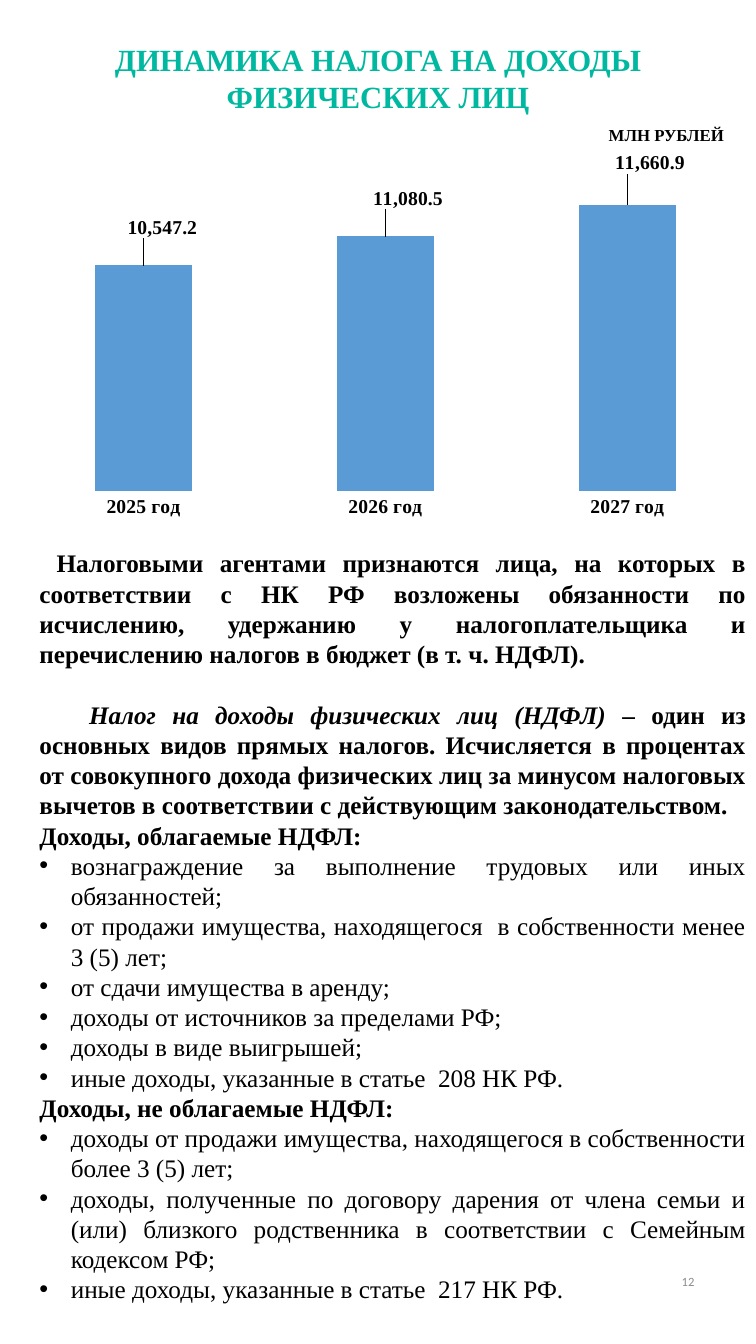
from pptx import Presentation
from pptx.chart.data import CategoryChartData
from pptx.dml.color import RGBColor
from pptx.enum.chart import XL_CHART_TYPE as ChartType, XL_LABEL_POSITION as LabelPos, XL_TICK_MARK as Tick
from pptx.enum.text import MSO_ANCHOR as Anchor, MSO_AUTO_SIZE as AutoSize, PP_ALIGN as Align
from pptx.oxml import parse_xml
from pptx.oxml.ns import nsdecls, qn
from pptx.util import Cm, Pt

SERIF = "Times New Roman"
NUMBER_FORMAT = "#,##0.0"
CATEGORIES = ["2025 год", "2026 год", "2027 год"]
VALUES = [10547.2, 11080.5, 11660.9]
LABEL_OFFSETS = [(0.025, -0.06), (0.03, -0.06), (0.03, -0.07)]

AGENTS = (
    "Налоговыми агентами признаются лица, на которых в соответствии с НК РФ возложены "
    "обязанности по исчислению, удержанию у налогоплательщика и перечислению налогов "
    "в бюджет (в т. ч. НДФЛ)."
)
TAX_NAME = "Налог на доходы физических лиц (НДФЛ)"
TAX_MEANING = (
    " – один из основных видов прямых налогов. Исчисляется в процентах от совокупного дохода "
    "физических лиц за минусом налоговых вычетов в соответствии с действующим законодательством."
)
INCOME_LISTS = {
    "Доходы, облагаемые НДФЛ:": [
        "вознаграждение за выполнение трудовых или иных обязанностей;",
        "от продажи имущества, находящегося  в собственности менее 3 (5) лет;",
        "от сдачи имущества в аренду;",
        "доходы от источников за пределами РФ;",
        "доходы в виде выигрышей;",
        "иные доходы, указанные в статье  208 НК РФ.",
    ],
    "Доходы, не облагаемые НДФЛ:": [
        "доходы от продажи имущества, находящегося в собственности более 3 (5) лет;",
        "доходы, полученные по договору дарения от члена семьи и (или) близкого "
        "родственника в соответствии с Семейным кодексом РФ;",
        "иные доходы, указанные в статье  217 НК РФ.",
    ],
}


def color(hex_code):
    return RGBColor.from_string(hex_code)


def style(font, size, bold=False, italic=False, name=SERIF, fill="000000"):
    font.name, font.size = name, Pt(size)
    font.bold, font.italic = bold, italic
    font.color.rgb = color(fill)


def add_run(p, text, size, **look):
    r = p.add_run()
    r.text = text
    style(r.font, size, **look)


def place(sp, left, top, width, height, anchor=Anchor.TOP):
    """Set the frame in centimetres and prepare its text; return the text frame."""
    sp.left, sp.top, sp.width, sp.height = Cm(left), Cm(top), Cm(width), Cm(height)
    tf = sp.text_frame
    tf.word_wrap, tf.auto_size, tf.vertical_anchor = True, AutoSize.NONE, anchor
    return tf


def add_label(s, frame, text, size, align=Align.LEFT, anchor=Anchor.TOP, **look):
    tf = place(s.shapes.add_textbox(0, 0, 0, 0), *frame, anchor)
    p = tf.paragraphs[0]
    p.alignment = align
    add_run(p, text, size, **look)


def add_paragraph(tf, runs, margin=0, indent=0, bullet=False, before=0):
    """Add a justified paragraph from (text, look) pairs."""
    p = tf.paragraphs[0] if not tf.paragraphs[0].runs else tf.add_paragraph()
    p.alignment, p.space_before = Align.JUSTIFY, Pt(before)
    pPr = p._p.get_or_add_pPr()
    pPr.set("marL", str(Cm(margin)))
    pPr.set("indent", str(Cm(indent)))
    mark = 'buChar char="•"' if bullet else "buNone"
    pPr.append(parse_xml(f"<a:{mark} {nsdecls('a')}/>"))
    for text, look in runs:
        add_run(p, text, 18, **look)


def manual_layout(x, y, size=None):
    """Layout element: an offset, or an inner plot area when size is given."""
    parts = [("x", x), ("y", y)]
    modes = ""
    if size:
        parts += [("w", size[0]), ("h", size[1])]
        modes = '<c:layoutTarget val="inner"/><c:xMode val="edge"/><c:yMode val="edge"/>'
    body = "".join(f'<c:{tag} val="{val}"/>' for tag, val in parts)
    return parse_xml(
        f"<c:layout {nsdecls('c')}><c:manualLayout>{modes}{body}</c:manualLayout></c:layout>"
    )


def set_plot_area(chart):
    area = chart._chartSpace.find(f".//{qn('c:plotArea')}")
    for old in area.findall(qn("c:layout")):
        area.remove(old)
    area.insert(0, manual_layout(0.03, 0.04, (0.96, 0.86)))


def shift_labels(series):
    for i, offset in enumerate(LABEL_OFFSETS):
        label = series.points[i].data_label
        style(label.font, 14, bold=True)
        label.position = LabelPos.OUTSIDE_END
    for dLbl, offset in zip(series._element.iter(qn("c:dLbl")), LABEL_OFFSETS):
        number = f'<c:numFmt {nsdecls("c")} formatCode="{NUMBER_FORMAT}" sourceLinked="0"/>'
        dLbl.insert(1, manual_layout(*offset))
        dLbl.insert(2, parse_xml(number))


def add_tax_chart(s):
    data = CategoryChartData(number_format=NUMBER_FORMAT)
    data.categories = CATEGORIES
    data.add_series("НДФЛ", VALUES)
    frame = s.shapes.add_chart(
        ChartType.COLUMN_CLUSTERED, Cm(0), Cm(3.76), Cm(19.05), Cm(9.58), data
    )
    chart = frame.chart
    chart.has_legend = chart.has_title = False
    style(chart.font, 10, name="Calibri")
    set_plot_area(chart)

    years = chart.category_axis
    years.major_tick_mark = years.minor_tick_mark = Tick.NONE
    years.format.line.fill.background()
    style(years.tick_labels.font, 14, bold=True)

    amounts = chart.value_axis
    amounts.visible = amounts.has_major_gridlines = False
    amounts.minimum_scale, amounts.maximum_scale = 6400, 12400

    plot = chart.plots[0]
    plot.gap_width, plot.vary_by_categories = 150, False
    series = plot.series[0]
    series.format.fill.solid()
    series.format.fill.fore_color.rgb = color("5B9BD5")
    labels = series.data_labels
    labels.show_value = True
    labels.number_format, labels.number_format_is_linked = NUMBER_FORMAT, False
    style(labels.font, 14, bold=True)
    shift_labels(series)


def fill_body(tf):
    bold = {"bold": True}
    add_paragraph(tf, [(AGENTS, bold)], indent=0.43)
    tax = [(TAX_NAME, {"bold": True, "italic": True}), (TAX_MEANING, bold)]
    add_paragraph(tf, tax, indent=1.25, before=21.6)
    for heading, items in INCOME_LISTS.items():
        add_paragraph(tf, [(heading, bold)])
        for item in items:
            add_paragraph(tf, [(item, {})], margin=0.79, indent=-0.79, bullet=True)


def main():
    prs = Presentation()
    prs.slide_width, prs.slide_height = Cm(19.05), Cm(33.86)
    s = prs.slides.add_slide(prs.slide_layouts[1])

    p = place(s.shapes.title, 0, 0.89, 19.05, 2.13).paragraphs[0]
    p.alignment = Align.CENTER
    add_run(p, "ДИНАМИКА НАЛОГА НА ДОХОДЫ ФИЗИЧЕСКИХ ЛИЦ", 22, bold=True, fill="00B8A0")

    add_tax_chart(s)
    fill_body(place(s.placeholders[1], 0.74, 13.67, 18.31, 19.48))
    add_label(s, (15.09, 3.02, 3.61, 0.76), "МЛН РУБЛЕЙ", 12, bold=True)
    add_label(s, (13.46, 31.39, 4.29, 1.8), "12", 9, Align.RIGHT, Anchor.MIDDLE,
              name="Calibri", fill="8C8C8C")
    prs.save("out.pptx")


if __name__ == "__main__":
    main()
